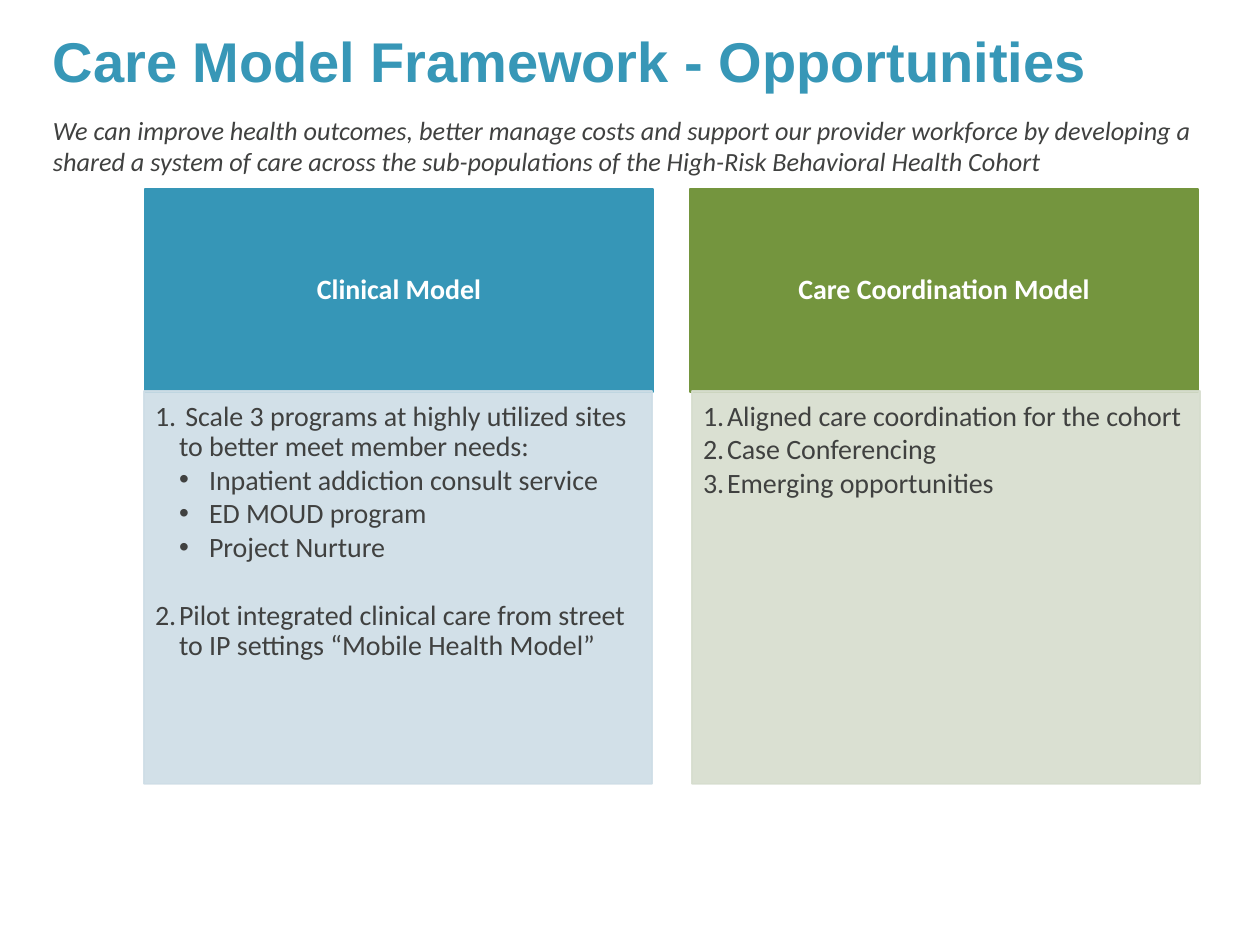
import pptx
import pptx.dml.color
import pptx.enum.shapes
import pptx.enum.text
import pptx.oxml.ns
import pptx.util
from lxml import etree

EMU_PER_PX = 914400 / 126
COLORS = {
    "title": "3797B7",
    "text": "404140",
    "white": "FFFFFF",
    "blue": "3696B7",
    "pale_blue": "CEDDE6",
    "green": "74953E",
    "pale_green": "D6DDCE",
}
ALIGN = pptx.enum.text.PP_ALIGN
ANCHOR = pptx.enum.text.MSO_ANCHOR


def px(length):
    return pptx.util.Emu(round(length * EMU_PER_PX))


def rgb(name):
    return pptx.dml.color.RGBColor.from_string(COLORS[name])


def add_child(parent, tag, **attributes):
    return etree.SubElement(parent, pptx.oxml.ns.qn(tag), attributes)


def write(paragraph, text, size=16, color="text", font="Calibri", bold=False,
          italic=False, align=ALIGN.LEFT, spacing=None, before=None, after=None,
          level=0, margin=0, hanging=0, number=None, bullet=None):
    paragraph.alignment = align
    paragraph.level = level
    if spacing:
        paragraph.line_spacing = spacing
    if before is not None:
        paragraph.space_before = pptx.util.Pt(before)
    if after is not None:
        paragraph.space_after = pptx.util.Pt(after)
    properties = paragraph._p.get_or_add_pPr()
    if margin:
        properties.set("marL", str(px(margin)))
        properties.set("indent", str(px(-hanging)))
    if number:
        add_child(properties, "a:buFont", typeface="+mj-lt")
        add_child(properties, "a:buAutoNum", type="arabicPeriod", startAt=str(number))
    elif bullet:
        add_child(properties, "a:buFont", typeface="Arial")
        add_child(properties, "a:buChar", char=bullet)
    run = paragraph.add_run()
    run.text = text
    run.font.name = font
    run.font.size = pptx.util.Pt(size)
    run.font.bold = bold
    run.font.italic = italic
    run.font.color.rgb = rgb(color)


class CareModelSlide:
    def __init__(self, presentation):
        self.slide = presentation.slides.add_slide(presentation.slide_layouts[6])

    def frame(self, shape, insets, anchor=ANCHOR.TOP):
        frame = shape.text_frame
        frame.word_wrap = True
        frame.vertical_anchor = anchor
        (frame.margin_left, frame.margin_top,
         frame.margin_right, frame.margin_bottom) = map(px, insets)
        return frame

    def label(self, text, left, top, width, height, **style):
        box = self.slide.shapes.add_textbox(*map(px, (left, top, width, height)))
        write(self.frame(box, (13, 6, 13, 6)).paragraphs[0], text, **style)

    def panel(self, left, top, width, height, color, opacity=100):
        panel = self.slide.shapes.add_shape(
            pptx.enum.shapes.MSO_SHAPE.RECTANGLE, *map(px, (left, top, width, height)))
        panel.shadow.inherit = False
        panel.line.width = pptx.util.Pt(1)
        for paint in (panel.fill, panel.line.fill):
            paint.solid()
            paint.fore_color.rgb = rgb(color)
        if opacity < 100:
            for tint in list(panel._element.spPr.iter(pptx.oxml.ns.qn("a:srgbClr"))):
                add_child(tint, "a:alpha", val=str(opacity * 1000))
        return panel

    def heading(self, text, left, top, width, height, color):
        panel = self.panel(left, top, width, height, color)
        frame = self.frame(panel, (15, 9, 15, 9), ANCHOR.MIDDLE)
        write(frame.paragraphs[0], text, color="white", bold=True,
              align=ALIGN.CENTER, spacing=0.9)

    def items(self, entries, left, top, width, height, color):
        panel = self.panel(left, top, width, height, color, opacity=90)
        frame = self.frame(panel, (11, 11, 15, 18))
        for index, (text, style) in enumerate(entries):
            paragraph = frame.add_paragraph() if index else frame.paragraphs[0]
            write(paragraph, text, spacing=0.9, after=2, **style)


def numbered(text, number, before=None):
    return text, dict(level=1, margin=24, hanging=24, number=number, before=before)


def bulleted(text):
    return text, dict(level=2, margin=54, hanging=30, bullet="•")


def main():
    presentation = pptx.Presentation()
    presentation.slide_width = px(1260)
    presentation.slide_height = px(945)
    page = CareModelSlide(presentation)

    page.label("Care Model Framework - Opportunities", 40, 28, 1105, 81,
               size=32, color="title", font="Arial", bold=True, spacing=0.9)
    page.label("We can improve health outcomes, better manage costs and support our "
               "provider workforce by developing a shared a system of care across the "
               "sub-populations of the High-Risk Behavioral Health Cohort",
               40, 108, 1194, 77, size=15, italic=True)

    clinical = [
        numbered(" Scale 3 programs at highly utilized sites to better meet member needs:", 1),
        bulleted("Inpatient addiction consult service"),
        bulleted("ED MOUD program"),
        bulleted("Project Nurture"),
        numbered("Pilot integrated clinical care from street to IP settings "
                 "“Mobile Health Model”", 2, before=19.7),
    ]
    coordination = [
        numbered(text, 1) for text in (
            "Aligned care coordination for the cohort",
            "Case Conferencing",
            "Emerging opportunities",
        )
    ]
    models = [
        ("Care Coordination Model", coordination, 690, 692, "green"),
        ("Clinical Model", clinical, 145, 144, "blue"),
    ]
    for name, entries, heading_left, items_left, color in models:
        page.heading(name, heading_left, 189, 508, 203, color)
        page.items(entries, items_left, 391, 508, 393, "pale_" + color)

    presentation.save("out.pptx")


if __name__ == "__main__":
    main()
